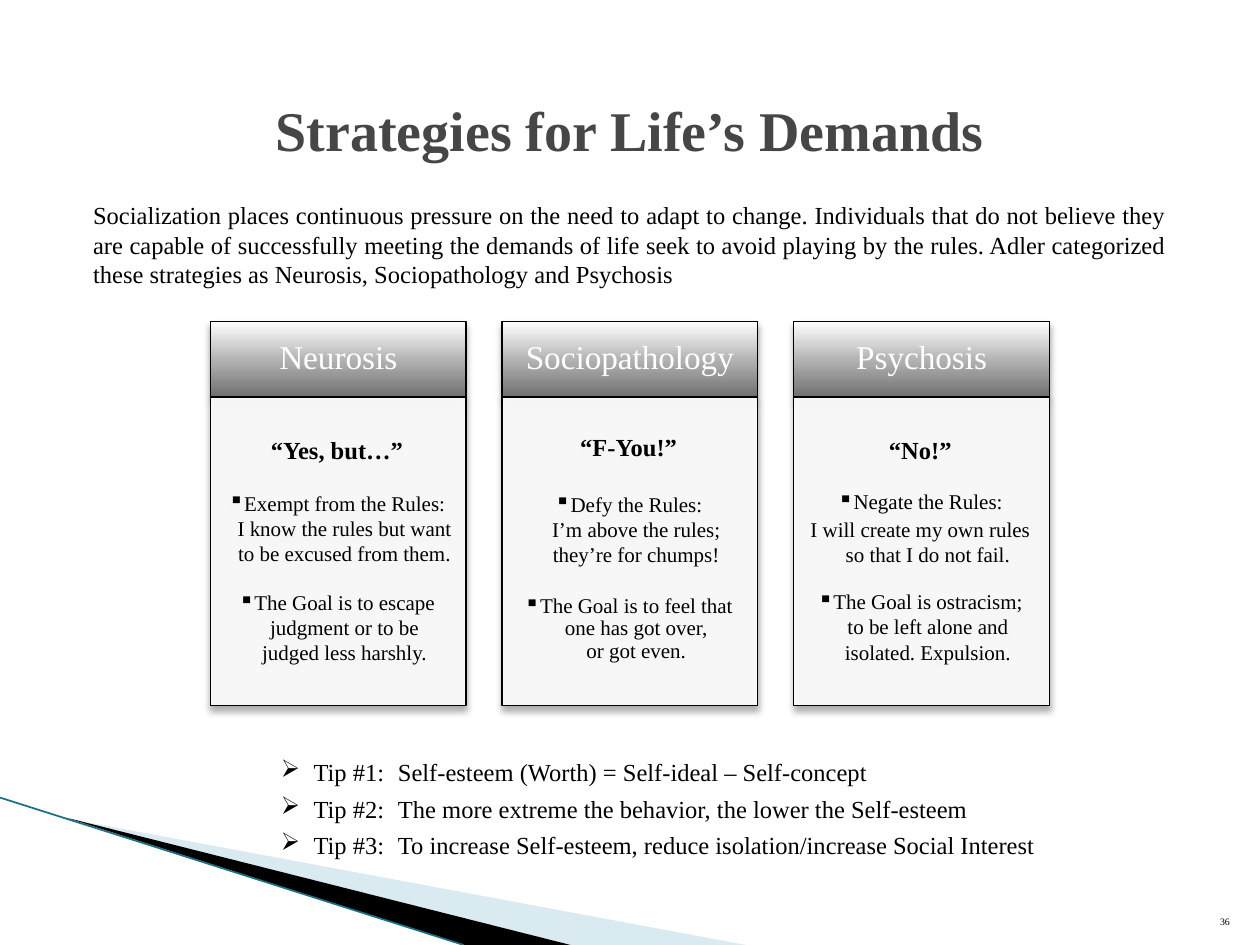
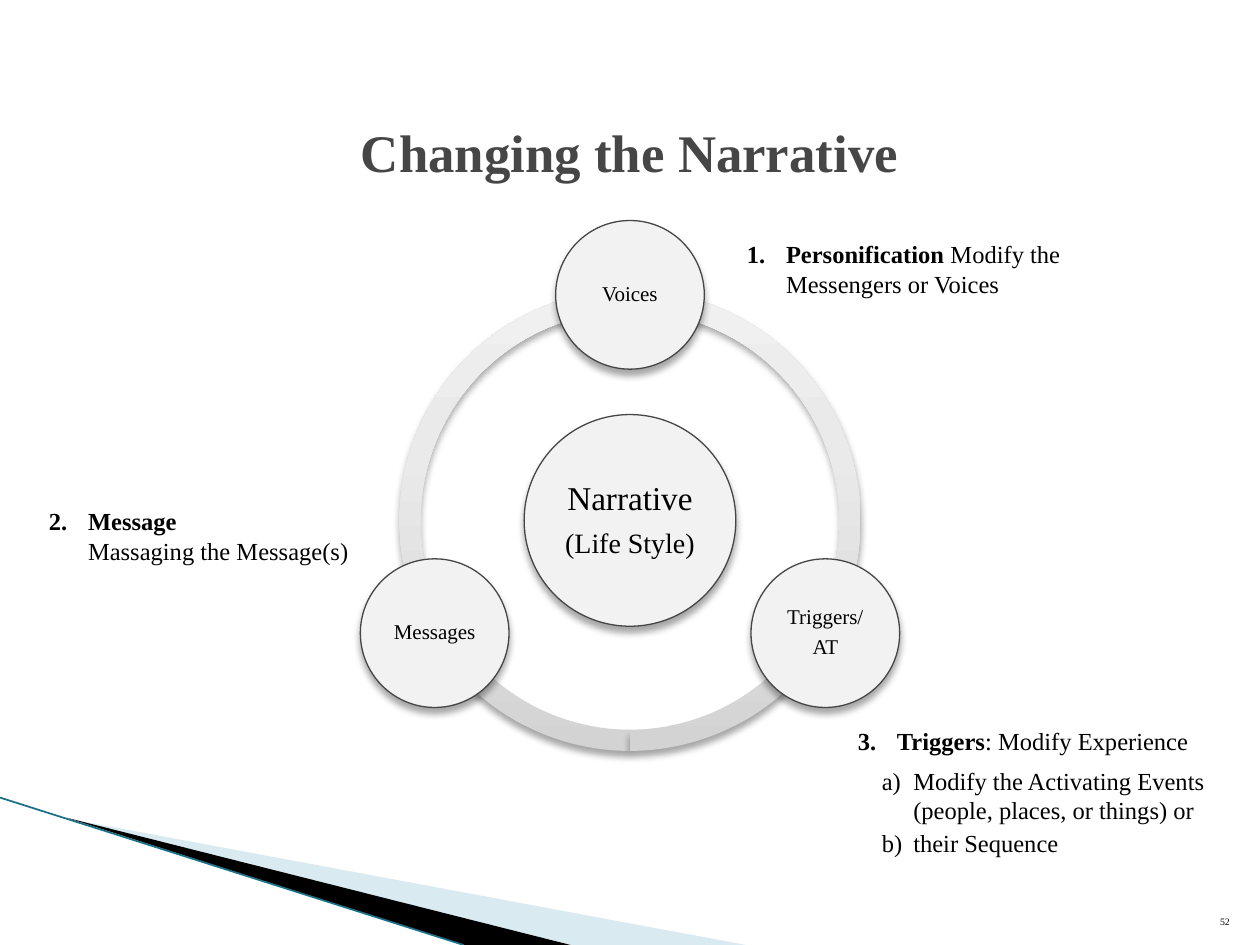
"""Build two slides on life strategies and changing the narrative."""
from copy import deepcopy
from dataclasses import dataclass
from math import cos, radians, sin

from lxml.etree import SubElement
from pptx import Presentation
from pptx.dml.color import RGBColor
from pptx.enum.shapes import MSO_CONNECTOR, MSO_SHAPE
from pptx.enum.text import MSO_ANCHOR, PP_ALIGN
from pptx.oxml.ns import qn
from pptx.util import Inches, Pt


@dataclass(frozen=True)
class Theme:
    font: str = "Times New Roman"
    ink: str = "000000"
    paper: str = "FFFFFF"
    title: str = "464646"
    disc: str = "F2F2F2"
    pale: str = "A0CBDC"
    teal: str = "1C7085"
    steel: tuple = ((0, "707070"), (50, "B4B4B4"), (70, "D3D3D3"), (100, "FFFFFF"))
    silver: tuple = ((0, "D3D3D3"), (65, "EAEAEA"), (100, "F0F0F0"))
    head: float = 19
    sub: float = 16
    body: float = 14
    small: float = 12
    page: float = 5.6


@dataclass
class Para:
    runs: list
    size: float = 14
    color: str = "000000"
    align: PP_ALIGN = PP_ALIGN.LEFT
    space: float = 1
    before: float = 0
    after: float = 0
    left: float = 0
    hang: float = 0
    mark: str = ""
    start: int = 1
    tab: float = 0


THEME = Theme()


def paint(shape, color, alpha=100):
    shape.fill.solid()
    shape.fill.fore_color.rgb = RGBColor.from_string(color)
    if alpha < 100:
        tint = shape._element.spPr.find(".//" + qn("a:srgbClr"))
        SubElement(tint, qn("a:alpha"), val=str(alpha * 1000))


def blend(shape, stops):
    shape.fill.gradient()
    shape.fill.gradient_angle = 90
    listing = shape._element.spPr.find(".//" + qn("a:gsLst"))
    for old in list(listing):
        listing.remove(old)
    for place, color in stops:
        stop = SubElement(listing, qn("a:gs"), pos=str(place * 1000))
        SubElement(stop, qn("a:srgbClr"), val=color)


def edge(shape, color=None):
    if color is None:
        shape.line.fill.background()
        return
    shape.line.color.rgb = RGBColor.from_string(color)
    shape.line.width = Pt(0.75)


def shade(shape):
    shape.shadow.inherit = False
    effect = shape._element.spPr.find(qn("a:effectLst"))
    outer = SubElement(effect, qn("a:outerShdw"), blurRad=str(Pt(4)), dist=str(Pt(3)),
                       dir="5400000", rotWithShape="0")
    color = SubElement(outer, qn("a:srgbClr"), val=THEME.ink)
    SubElement(color, qn("a:alpha"), val="35000")


def mark(para, item):
    props = para._p.get_or_add_pPr()
    props.set("marL", str(Inches(item.left)))
    props.set("indent", str(-Inches(item.hang)))
    if item.mark in ("arabicPeriod", "alphaLcParenR"):
        SubElement(props, qn("a:buAutoNum"), type=item.mark, startAt=str(item.start))
    elif item.mark:
        SubElement(props, qn("a:buChar"), char=item.mark)
    if item.tab:
        tabs = SubElement(props, qn("a:tabLst"))
        SubElement(tabs, qn("a:tab"), pos=str(Inches(item.tab)), algn="l")


def add_run(para, text, bold, item):
    for row, line in enumerate(text.split("\n")):
        if row:
            para.add_line_break()
            gap = para._p[-1]
        run = para.add_run()
        run.text = line
        font = run.font
        font.name, font.size, font.bold = THEME.font, Pt(item.size), bold
        font.color.rgb = RGBColor.from_string(item.color)
        if row:
            gap.append(deepcopy(run._r.rPr))


def write(shape, items, inset=(0.1, 0.05, 0.1, 0.05), anchor=MSO_ANCHOR.TOP):
    frame = shape.text_frame
    frame.word_wrap = True
    frame.vertical_anchor = anchor
    (frame.margin_left, frame.margin_top,
     frame.margin_right, frame.margin_bottom) = map(Inches, inset)
    for row, item in enumerate(items):
        para = frame.add_paragraph() if row else frame.paragraphs[0]
        mark(para, item)
        para.alignment = item.align
        para.line_spacing = item.space
        para.space_after = Pt(item.after)
        if row:
            para.space_before = Pt(item.before)
        for text, bold in item.runs:
            add_run(para, text, bold, item)


def add_text(slide, box, items, **style):
    write(slide.shapes.add_textbox(*map(Inches, box)), items, **style)


def add_form(slide, kind, box):
    shape = slide.shapes.add_shape(kind, *map(Inches, box))
    shade(shape)
    return shape


def add_wedge(slide, points, color, alpha=100):
    spots = [(Inches(x), Inches(y)) for x, y in points]
    form = slide.shapes.build_freeform(*spots[0], scale=1.0)
    form.add_line_segments(spots[1:], close=True)
    shape = form.convert_to_shape()
    shape.shadow.inherit = False
    paint(shape, color, alpha)
    edge(shape)


def add_base(deck, page):
    slide = deck.slides.add_slide(deck.slide_layouts[6])
    add_wedge(slide, [(0.55, 6.5), (5.92, 7.5), (4.53, 7.5)], THEME.pale, 40)
    add_wedge(slide, [(0.53, 6.49), (4.53, 7.5), (3.68, 7.5)], THEME.ink)
    line = slide.shapes.add_connector(
        MSO_CONNECTOR.STRAIGHT, Inches(0), Inches(6.33), Inches(3.68), Inches(7.5))
    line.line.color.rgb = RGBColor.from_string(THEME.teal)
    line.line.width = Pt(1)
    SubElement(line._element.spPr, qn("a:effectLst"))
    add_text(slide, (9.46, 7.01, 0.4, 0.4),
             [Para([(page, False)], THEME.page, align=PP_ALIGN.RIGHT)],
             anchor=MSO_ANCHOR.BOTTOM)
    return slide


def add_title(slide, text, top, size):
    add_text(slide, (0.5, top, 9, 0.8),
             [Para([(text, True)], size, THEME.title, PP_ALIGN.CENTER)])


def label(text, size, color=THEME.ink):
    return Para([(text, False)], size, color, PP_ALIGN.CENTER, 0.9, after=0.35 * size)


def point(text, before, sign="▪", space=1):
    return Para([(text, False)], THEME.small, align=PP_ALIGN.CENTER, space=space,
                before=before, left=0.12, hang=0.12, mark=sign)


def add_card(slide, left, name, quote, points, top):
    head = add_form(slide, MSO_SHAPE.RECTANGLE, (left, 2.55, 2.03, 0.6))
    blend(head, THEME.steel)
    edge(head, THEME.ink)
    write(head, [label(name, THEME.head, THEME.paper)],
          (0.1, 0.08, 0.1, 0.08), MSO_ANCHOR.MIDDLE)
    body = add_form(slide, MSO_SHAPE.RECTANGLE, (left, 3.15, 2.03, 2.45))
    paint(body, THEME.paper, 90)
    edge(body, THEME.ink)
    first = Para([(quote, True)], THEME.body, align=PP_ALIGN.CENTER)
    write(body, [first, *points], (0.07, top, 0.09, 0.1))


def add_disc(slide, x, y, size, items):
    disc = add_form(slide, MSO_SHAPE.OVAL, (x - size / 2, y - size / 2, size, size))
    paint(disc, THEME.disc)
    edge(disc, THEME.title)
    write(disc, items, (0.02,) * 4, MSO_ANCHOR.MIDDLE)


def add_arc(slide, start, end):
    arc = add_form(slide, MSO_SHAPE.BLOCK_ARC, (3.17, 2.3, 3.66, 3.66))
    for spot, value in enumerate((start * 0.6, end * 0.6, 0.046)):
        arc.adjustments[spot] = value
    blend(arc, THEME.silver)
    edge(arc)


def step(runs, start, **style):
    return Para(runs, THEME.body, left=0.31, hang=0.31, mark="arabicPeriod",
                start=start, **style)


def part(text, start):
    return Para([(text, False)], THEME.body, after=2, left=0.44, hang=0.25,
                mark="alphaLcParenR", start=start)


def build_cards(deck):
    slide = add_base(deck, "36")
    add_text(slide, (0.64, 1.54, 8.72, 0.81), [Para([(
        "Socialization places continuous pressure on the need to adapt to change. "
        "Individuals that do not believe they are capable of successfully meeting the "
        "demands of life seek to avoid playing by the rules. Adler categorized these "
        "strategies as Neurosis, Sociopathology and Psychosis", False)],
        THEME.body, align=PP_ALIGN.JUSTIFY)])
    add_title(slide, "Strategies for Life’s Demands", 0.71, 32)
    cards = [
        ("Neurosis", "“Yes, but…”", [
            point("Exempt from the Rules:\nI know the rules but want\n"
                  "to be excused from them.", 15),
            point("The Goal is to escape\njudgment or to be\njudged less harshly.", 13.5),
        ], 0.3),
        ("Sociopathology", "“F-You!”", [
            point("Defy the Rules:\nI’m above the rules;\nthey’re for chumps!", 17),
            point("The Goal is to feel that\none has got over,\nor got even.", 16, space=0.9),
        ], 0.28),
        ("Psychosis", "“No!”", [
            point("Negate the Rules:", 14),
            point("I will create my own rules\nso that I do not fail.", 1.5, ""),
            point("The Goal is ostracism;\nto be left alone and\nisolated. Expulsion.", 12.5),
        ], 0.3),
    ]
    for col, card in enumerate(cards):
        add_card(slide, 1.67 + 2.315 * col, *card)
    tips = ["Self-esteem (Worth) = Self-ideal – Self-concept",
            "The more extreme the behavior, the lower the Self-esteem",
            "To increase Self-esteem, reduce isolation/increase Social Interest"]
    add_text(slide, (1.88, 5.96, 6.88, 0.92), [
        Para([(f"Tip #{rank}:\t{tip}", False)], THEME.body, after=4, left=0.51,
             hang=0.26, mark="➢", tab=1.18) for rank, tip in enumerate(tips, 1)])


def build_ring(deck):
    slide = add_base(deck, "52")
    for start, end in ((90, 162), (18, 90), (162, 18)):
        add_arc(slide, start, end)
    x, y, reach = 5, 4.13, 1.79
    add_disc(slide, x, y, 1.68,
             [label("Narrative", THEME.head), label("(Life Style)", THEME.sub)])
    for turn, names in enumerate((["Voices"], ["Triggers/", "AT"], ["Messages"])):
        angle = radians(120 * turn - 90)
        add_disc(slide, x + reach * cos(angle), y + reach * sin(angle), 1.18,
                 [label(name, THEME.small) for name in names])
    add_title(slide, "Changing the Narrative", 0.9, 30.2)
    add_text(slide, (5.83, 1.85, 3.51, 0.57), [
        step([("Personification", True), (" Modify the Messengers or Voices", False)], 1)])
    add_text(slide, (0.29, 3.97, 3.29, 0.57), [
        step([("Message", True)], 2),
        Para([("Massaging the Message(s)", False)], THEME.body, left=0.31)])
    add_text(slide, (6.71, 5.71, 3.29, 1.16), [
        step([("Triggers", True), (": Modify Experience", False)], 3, after=6),
        part("Modify the Activating Events (people, places, or things) or", 1),
        part("their Sequence", 2)])


def main():
    deck = Presentation()
    deck.slide_width, deck.slide_height = Inches(10), Inches(7.5)
    build_cards(deck)
    build_ring(deck)
    deck.save("out.pptx")


if __name__ == "__main__":
    main()
